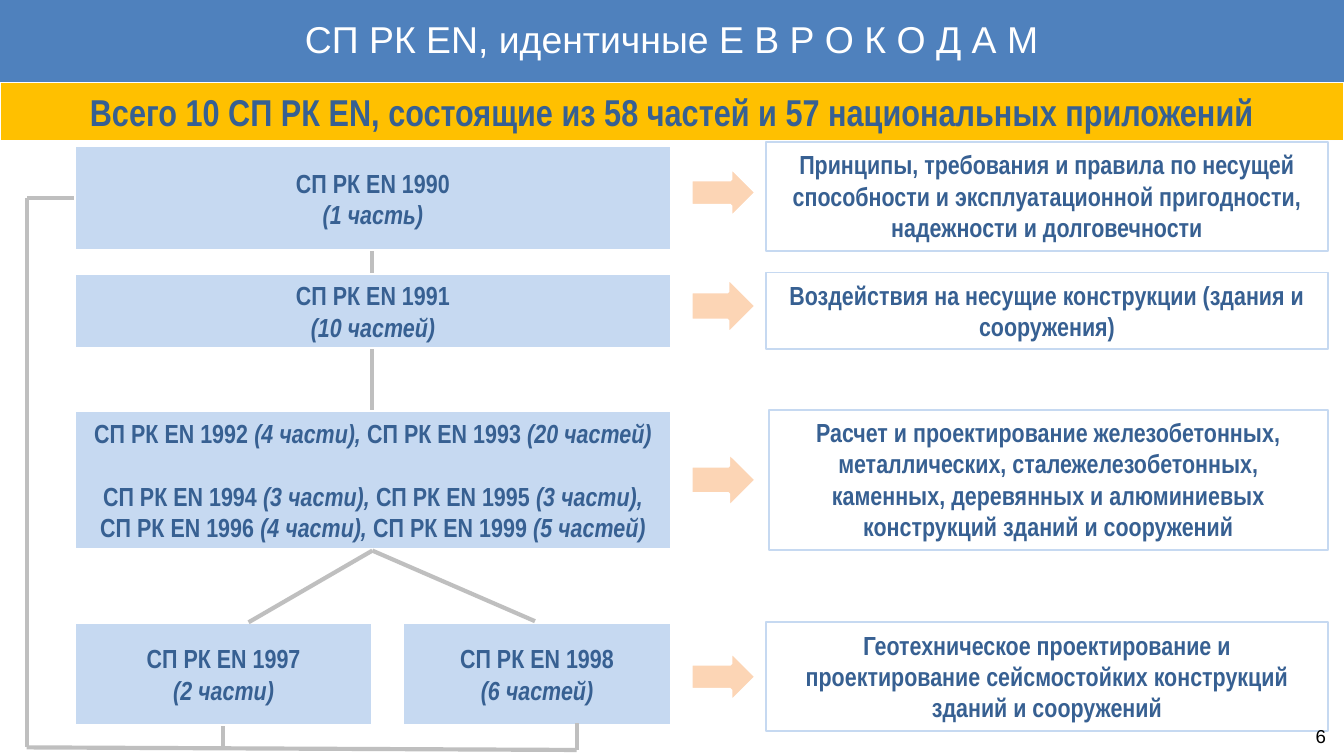
from lxml import etree
from pptx import Presentation
from pptx.dml.color import RGBColor
from pptx.enum.shapes import MSO_CONNECTOR, MSO_SHAPE
from pptx.enum.text import MSO_ANCHOR, PP_ALIGN
from pptx.oxml.ns import qn
from pptx.util import Pt

RECT, ARROW = MSO_SHAPE.RECTANGLE, MSO_SHAPE.RIGHT_ARROW
STRAIGHT = MSO_CONNECTOR.STRAIGHT
TOP, MIDDLE = MSO_ANCHOR.TOP, MSO_ANCHOR.MIDDLE
CENTER, RIGHT = PP_ALIGN.CENTER, PP_ALIGN.RIGHT

COLORS = {
    "title": "4F81BD", "banner": "FFC000", "box": "C6D9F1", "arrow": "FCD5B5",
    "line": "BFBFBF", "text": "376092", "white": "FFFFFF", "black": "000000",
}


def rgb(name):
    return RGBColor.from_string(COLORS[name])


class Deck:
    head_font = "Arial"
    body_font = "Arial Narrow"
    body_size = 14

    def __init__(self, width, height):
        self.prs = Presentation()
        self.prs.slide_width, self.prs.slide_height = Pt(width), Pt(height)
        self.s = self.prs.slides.add_slide(self.prs.slide_layouts[6])

    def shape(self, kind, at, fill, line=None, width=1):
        sp = self.s.shapes.add_shape(kind, *map(Pt, at))
        sp.shadow.inherit = False
        sp.fill.solid()
        sp.fill.fore_color.rgb = rgb(fill)
        if line:
            sp.line.color.rgb = rgb(line)
            sp.line.width = Pt(width)
        else:
            sp.line.fill.background()
        return sp

    def frame(self, sp, anchor, insets=(7.2, 3.6, 7.2, 3.6)):
        tf = sp.text_frame
        tf.word_wrap = True
        tf.vertical_anchor = anchor
        tf.margin_left, tf.margin_top, tf.margin_right, tf.margin_bottom = map(Pt, insets)
        return tf

    def run(self, p, text, italic=False, size=body_size, font=body_font, color="text", bold=True):
        r = p.add_run()
        r.text = text
        r.font.name, r.font.size = font, Pt(size)
        r.font.bold, r.font.italic = bold, italic
        r.font.color.rgb = rgb(color)

    def title(self, at, text):
        tf = self.frame(self.shape(RECT, at, "title"), MIDDLE, (7.2, 7.2, 7.2, 20))
        p = tf.paragraphs[0]
        p.alignment, p.line_spacing = CENTER, 1.5
        self.run(p, text, size=20, font=self.head_font, color="white", bold=False)

    def label(self, at, text, fill, line, size=body_size):
        p = self.frame(self.shape(RECT, at, fill, line), TOP).paragraphs[0]
        p.alignment = CENTER
        self.run(p, text, size=size)

    def codes(self, at, paragraphs, gap=0):
        tf = self.frame(self.shape(RECT, at, "box", "white", 2), MIDDLE)
        for i, parts in enumerate(paragraphs):
            p = tf.paragraphs[0] if i == 0 else tf.add_paragraph()
            p.alignment, p.space_before = CENTER, Pt(gap if i else 0)
            for text in parts:
                self.run(p, text, italic=text.startswith("("))

    def arrow(self, at):
        self.shape(ARROW, at, "arrow", "white", 2)

    def line(self, start, end):
        c = self.s.shapes.add_connector(STRAIGHT, *map(Pt, start + end))
        c.line.color.rgb = rgb("line")
        c.line.width = Pt(2.25)
        etree.SubElement(c._element.spPr, qn("a:effectLst"))

    def number(self, at, text):
        sp = self.s.shapes.add_textbox(*map(Pt, at))
        p = self.frame(sp, MIDDLE, (6, 6, 6, 6)).paragraphs[0]
        p.alignment = RIGHT
        self.run(p, text, size=10, font=self.head_font, color="black", bold=False)


LEFT, WIDTH = 39.6, 320.4
NOTE_X, NOTE_RIGHT = 410.4, 711.4
ARROW_X, ARROW_W = 370, 35.3
MID, RAIL = 199.5, 14.3

CODES = [
    ((LEFT, 77.9, WIDTH, 56.7), [["СП РК EN 1990"], ["(1 часть)"]], 0),
    ((LEFT, 146.2, WIDTH, 41), [["СП РК EN 1991"], ["(10 частей)"]], 0),
    ((LEFT, 219.7, WIDTH, 74.9), [
        ["СП РК EN 1992 ", "(4 части), ", "СП РК EN 1993 ", "(20 частей)"],
        ["СП РК EN 1994 ", "(3 части), ", "СП РК EN 1995 ", "(3 части), ",
         "СП РК EN 1996 ", "(4 части), ", "СП РК EN 1999 ", "(5 частей)"],
    ], 16.8),
    ((LEFT, 333.4, 160.4, 55.4), [["СП РК EN 1997"], ["(2 части)"]], 0),
    ((215.4, 333.4, 144.6, 55.4), [["СП РК EN 1998"], ["(6 частей)"]], 0),
]

NOTES = [
    (NOTE_X, 76.2, 58.2, 89.2, 28,
     "Принципы, требования и правила по несущей способности и эксплуатационной "
     "пригодности, надежности и долговечности"),
    (NOTE_X, 146, 41, 148.5, 31,
     "Воздействия на несущие конструкции (здания и сооружения)"),
    (412, 219.6, 75, 242, 30.2,
     "Расчет и проектирование железобетонных, металлических, сталежелезобетонных, "
     "каменных, деревянных и алюминиевых конструкций зданий и сооружений"),
    (NOTE_X, 333.4, 58.2, 348.6, 28,
     "Геотехническое проектирование и проектирование сейсмостойких конструкций "
     "зданий и сооружений"),
]

LINES = [
    ((MID, 134.6), (MID, 146.2)),
    ((MID, 187.2), (MID, 219.7)),
    ((MID, 295), (133.2, 333.4)),
    ((MID, 295), (286.6, 332.8)),
    ((LEFT, 106), (RAIL, 106)),
    ((RAIL, 106), (RAIL, 400.4)),
    ((RAIL, 400.4), (308.9, 401.8)),
    ((308.9, 401.8), (308.9, 387.4)),
    ((119.5, 401.4), (119.5, 389.2)),
]


def main():
    deck = Deck(720, 405)
    deck.title((0, -2.2, 720, 46.6), "СП РК EN, идентичные Е В Р О К О Д А М")
    deck.label((0, 44.2, 720, 31.5),
               "Всего 10 СП РК EN, состоящие из 58 частей и 57 национальных приложений",
               "banner", "white", 20)
    for at, paragraphs, gap in CODES:
        deck.codes(at, paragraphs, gap)
    for start, end in LINES:
        deck.line(start, end)
    for x, y, height, arrow_y, arrow_h, text in NOTES:
        deck.label((x, y, NOTE_RIGHT - x, height), text, "white", "box")
        deck.arrow((ARROW_X, arrow_y, ARROW_W, arrow_h))
    deck.number((673.2, 378.7, 43.2, 31), "6")
    deck.prs.save("out.pptx")


if __name__ == "__main__":
    main()
